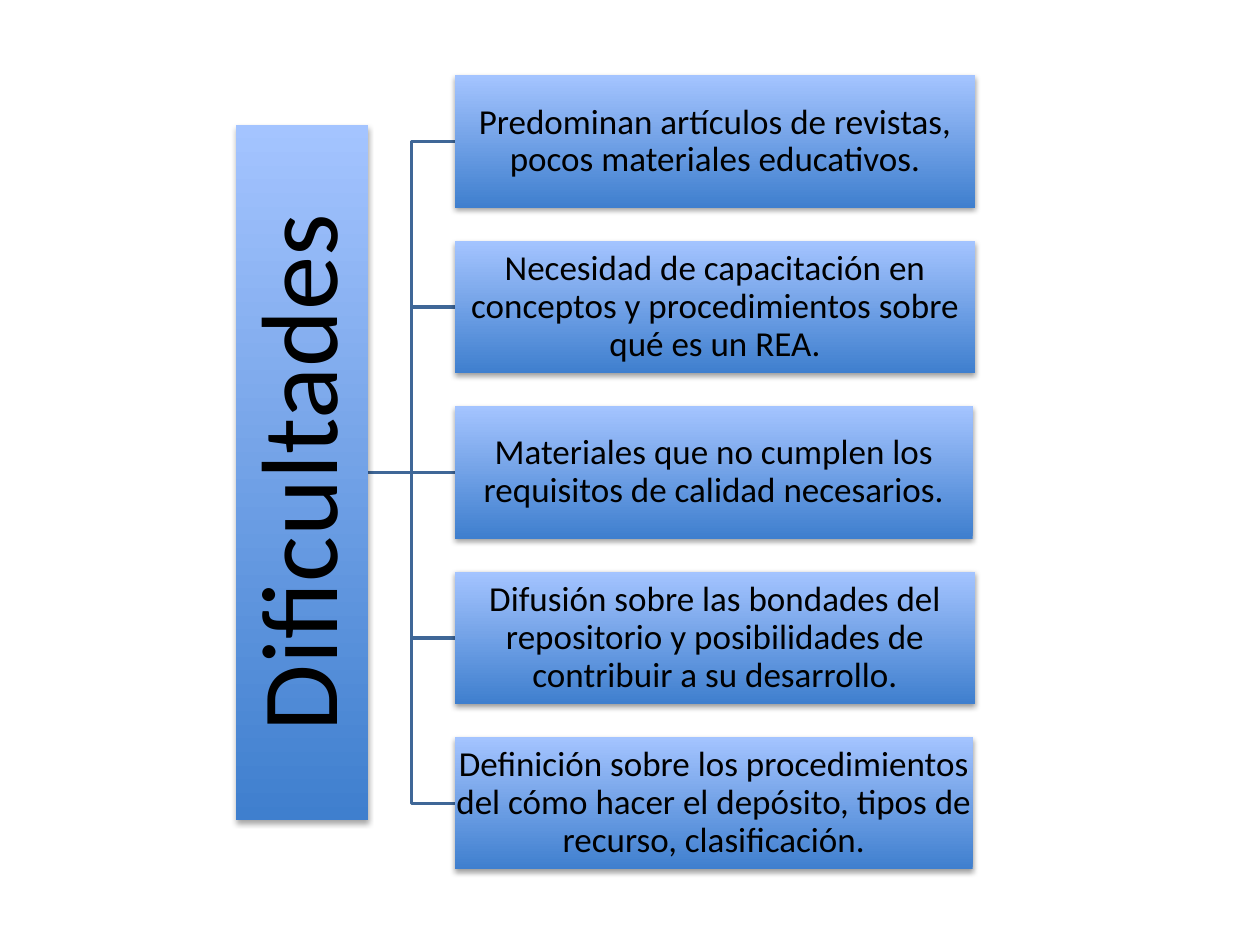
from lxml.etree import SubElement
from pptx import Presentation
from pptx.dml.color import RGBColor
from pptx.enum.shapes import MSO_CONNECTOR, MSO_SHAPE
from pptx.enum.text import MSO_ANCHOR, PP_ALIGN
from pptx.oxml.ns import qn
from pptx.util import Cm, Pt

HEADING = "Dificultades"
WIDE, NARROW = 10.49, 10.44
DIFFICULTIES = [
    ("Predominan artículos de revistas, pocos materiales educativos.", WIDE),
    ("Necesidad de capacitación en conceptos y procedimientos sobre qué es un REA.", WIDE),
    ("Materiales que no cumplen los requisitos de calidad necesarios.", NARROW),
    ("Difusión sobre las bondades del repositorio y posibilidades de contribuir a su desarrollo.", WIDE),
    ("Definición sobre los procedimientos del cómo hacer el depósito, tipos de recurso, clasificación.", NARROW),
]
FONT, TEXT, LINE = "Calibri", "000000", "3F6797"
GRADIENT = ["3F7FCE", "A4C4FF"]
PAGE_WIDTH, PAGE_HEIGHT = 25.4, 19.05
MIDDLE = PAGE_HEIGHT / 2
BOX_HEIGHT, PITCH, BOX_LEFT = 2.67, 3.335, 9.17
HEADING_LENGTH, HEADING_CENTER = 14.02, 6.09


def color(value):
    return RGBColor.from_string(value)


def add_shadow(shape, distance, opacity):
    shape.shadow.inherit = False
    effects = shape._element.spPr.find(qn("a:effectLst"))
    shadow = SubElement(effects, qn("a:outerShdw"), blurRad="40000", dist=str(distance),
                        dir="5400000", rotWithShape="0")
    black = SubElement(shadow, qn("a:srgbClr"), val="000000")
    SubElement(black, qn("a:alpha"), val=str(opacity * 1000))


def add_box(page, text, left, center, width, size, inset, distance, opacity):
    box = page.shapes.add_shape(MSO_SHAPE.RECTANGLE, Cm(left), Cm(center - BOX_HEIGHT / 2),
                                Cm(width), Cm(BOX_HEIGHT))
    box.line.fill.background()
    box.fill.gradient()
    box.fill.gradient_angle = 90
    for stop, value in zip(box.fill.gradient_stops, GRADIENT):
        stop.color.rgb = color(value)
    box._element.spPr.find(qn("a:gradFill")).set("rotWithShape", "0")
    add_shadow(box, distance, opacity)
    frame = box.text_frame
    frame.word_wrap = True
    frame.vertical_anchor = MSO_ANCHOR.MIDDLE
    frame.margin_left = frame.margin_right = frame.margin_top = frame.margin_bottom = Cm(inset)
    para = frame.paragraphs[0]
    para.alignment = PP_ALIGN.CENTER
    para.line_spacing = 0.9
    span = para.add_run()
    span.text = text
    span.font.name = FONT
    span.font.size = Pt(size)
    span.font.color.rgb = color(TEXT)
    return box


def add_branch(page, center):
    kind = MSO_CONNECTOR.STRAIGHT if center == MIDDLE else MSO_CONNECTOR.ELBOW
    start = HEADING_CENTER + BOX_HEIGHT / 2
    branch = page.shapes.add_connector(kind, Cm(start), Cm(MIDDLE), Cm(BOX_LEFT), Cm(center))
    branch.line.color.rgb = color(LINE)
    branch.line.width = Pt(2)
    SubElement(branch._element.spPr, qn("a:effectLst"))


def main():
    """Build the slide of difficulties as a horizontal hierarchy."""
    deck = Presentation()
    deck.slide_width, deck.slide_height = Cm(PAGE_WIDTH), Cm(PAGE_HEIGHT)
    page = deck.slides.add_slide(deck.slide_layouts[6])
    half = len(DIFFICULTIES) // 2
    centers = [MIDDLE + (row - half) * PITCH for row in range(len(DIFFICULTIES))]
    for center in reversed(centers):
        add_branch(page, center)
    heading = add_box(page, HEADING, HEADING_CENTER - HEADING_LENGTH / 2, MIDDLE,
                      HEADING_LENGTH, 62, 0.1, 23000, 35)
    heading.rotation = 270
    for (text, width), center in zip(DIFFICULTIES, centers):
        add_box(page, text, BOX_LEFT, center, width, 20, 0.03, 20000, 38)
    deck.save("out.pptx")


if __name__ == "__main__":
    main()
